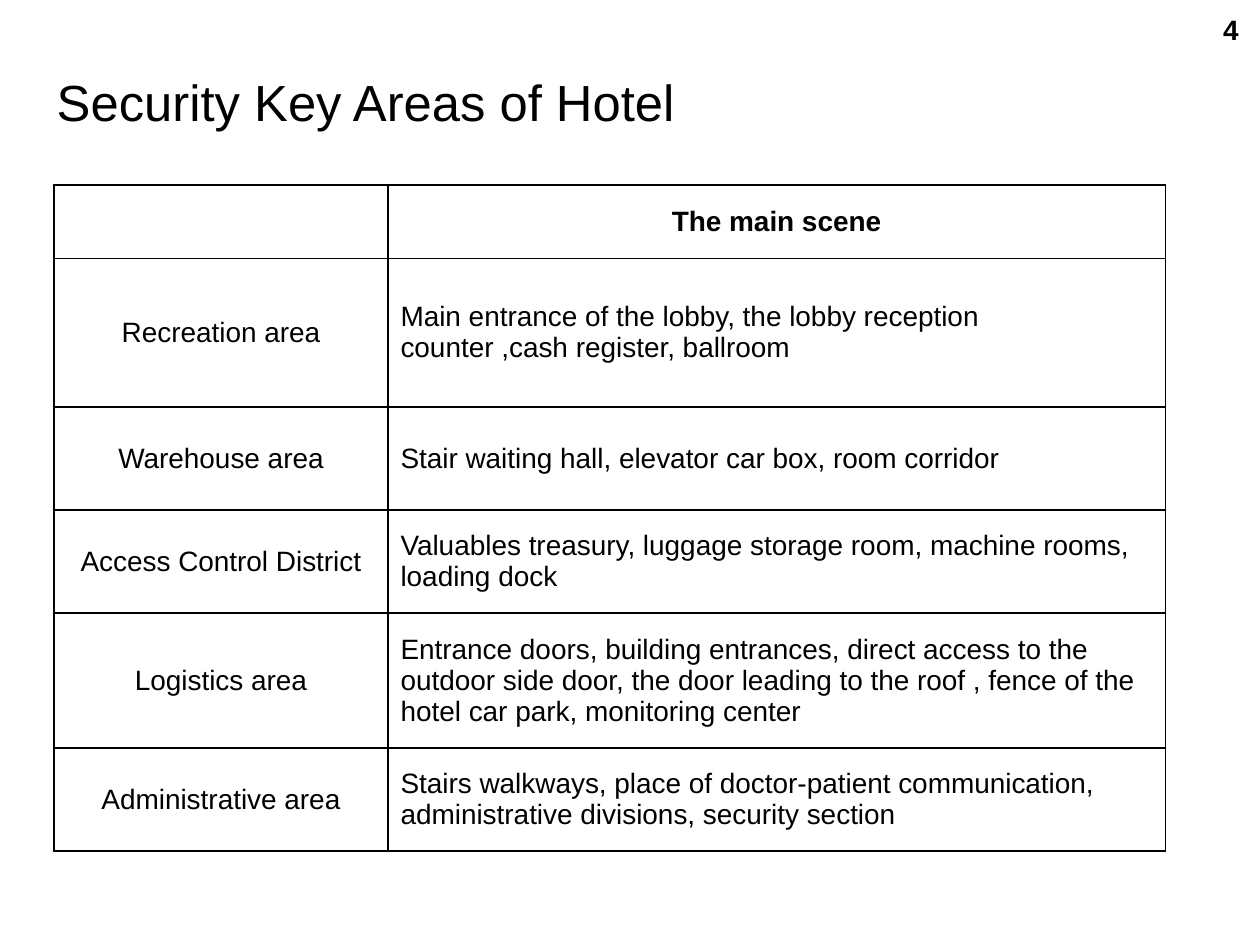
from lxml import etree
from pptx import Presentation
from pptx import util as u
from pptx.dml.color import RGBColor
from pptx.enum import text
from pptx.oxml.ns import qn

MID, LEFT, RIGHT = text.PP_ALIGN.CENTER, text.PP_ALIGN.LEFT, text.PP_ALIGN.RIGHT
AREAS = [
    ("", "The main scene"),
    ("Recreation area",
     "Main entrance of the lobby, the lobby reception counter ,cash register, ballroom"),
    ("Warehouse area", "Stair waiting hall, elevator car box, room corridor"),
    ("Access Control District",
     "Valuables treasury, luggage storage room, machine rooms, loading dock"),
    ("Logistics area",
     "Entrance doors, building entrances, direct access to the outdoor side door, "
     "the door leading to the roof , fence of the hotel car park, monitoring center"),
    ("Administrative area",
     "Stairs walkways, place of doctor-patient communication, "
     "administrative divisions, security section"),
]
WIDTHS = [6.73, 15.67]
HEIGHTS = [1.48, 2.99, 2.08, 2.08, 2.72, 2.08]


def color(code):
    return RGBColor.from_string(code)


class Page:
    font = "Arial"
    ink = "000000"
    size = 16

    def __init__(self, deck):
        self.slide = deck.slides.add_slide(deck.slide_layouts[5])

    def fill_text(self, frame, words, size, align, bold=False):
        frame.text = words
        for para in frame.paragraphs:
            para.alignment = align
            for run in para.runs:
                run.font.name = self.font
                run.font.size = u.Pt(size)
                run.font.bold = bold
                run.font.color.rgb = color(self.ink)

    def title(self, words, left, top, width, height):
        shape = self.slide.shapes.title
        shape.left, shape.top = u.Cm(left), u.Cm(top)
        shape.width, shape.height = u.Cm(width), u.Cm(height)
        frame = shape.text_frame
        self.fill_text(frame, words, 29, LEFT)
        frame.vertical_anchor = text.MSO_ANCHOR.MIDDLE
        frame.paragraphs[0].line_spacing = 1.2

    def label(self, words, left, top, width, height):
        box = self.slide.shapes.add_textbox(
            u.Cm(left), u.Cm(top), u.Cm(width), u.Cm(height))
        box.text_frame.word_wrap = True
        self.fill_text(box.text_frame, words, self.size, RIGHT, True)

    def border(self, cell):
        props = cell._tc.get_or_add_tcPr()
        for place, side in enumerate(("lnL", "lnR", "lnT", "lnB")):
            line = etree.Element(qn("a:" + side), w=str(u.Pt(1)))
            fill = etree.SubElement(line, qn("a:solidFill"))
            etree.SubElement(fill, qn("a:srgbClr"), val=self.ink)
            props.insert(place, line)

    def table(self, rows, left, top, widths, heights):
        grid = self.slide.shapes.add_table(
            len(rows), len(widths), u.Cm(left), u.Cm(top),
            u.Cm(sum(widths)), u.Cm(sum(heights))).table
        grid.first_row = grid.horz_banding = False
        for col, width in zip(grid.columns, widths):
            col.width = u.Cm(width)
        for r, (row, height) in enumerate(zip(rows, heights)):
            grid.rows[r].height = u.Cm(height)
            for c, words in enumerate(row):
                cell = grid.cell(r, c)
                head = r == 0
                self.fill_text(cell.text_frame, words, self.size,
                               MID if head or c == 0 else LEFT, head)
                cell.vertical_anchor = text.MSO_ANCHOR.MIDDLE
                cell.fill.background()
                self.border(cell)


def main():
    deck = Presentation()
    deck.slide_width, deck.slide_height = u.Cm(25.4), u.Cm(19.05)
    page = Page(deck)
    page.label("4", 19.3, 0.13, 5.92, 1.32)
    page.title("Security Key Areas of Hotel", 0.89, 0.33, 22.86, 3.18)
    page.table(AREAS, 1.09, 3.73, WIDTHS, HEIGHTS)
    deck.save("out.pptx")


if __name__ == "__main__":
    main()
